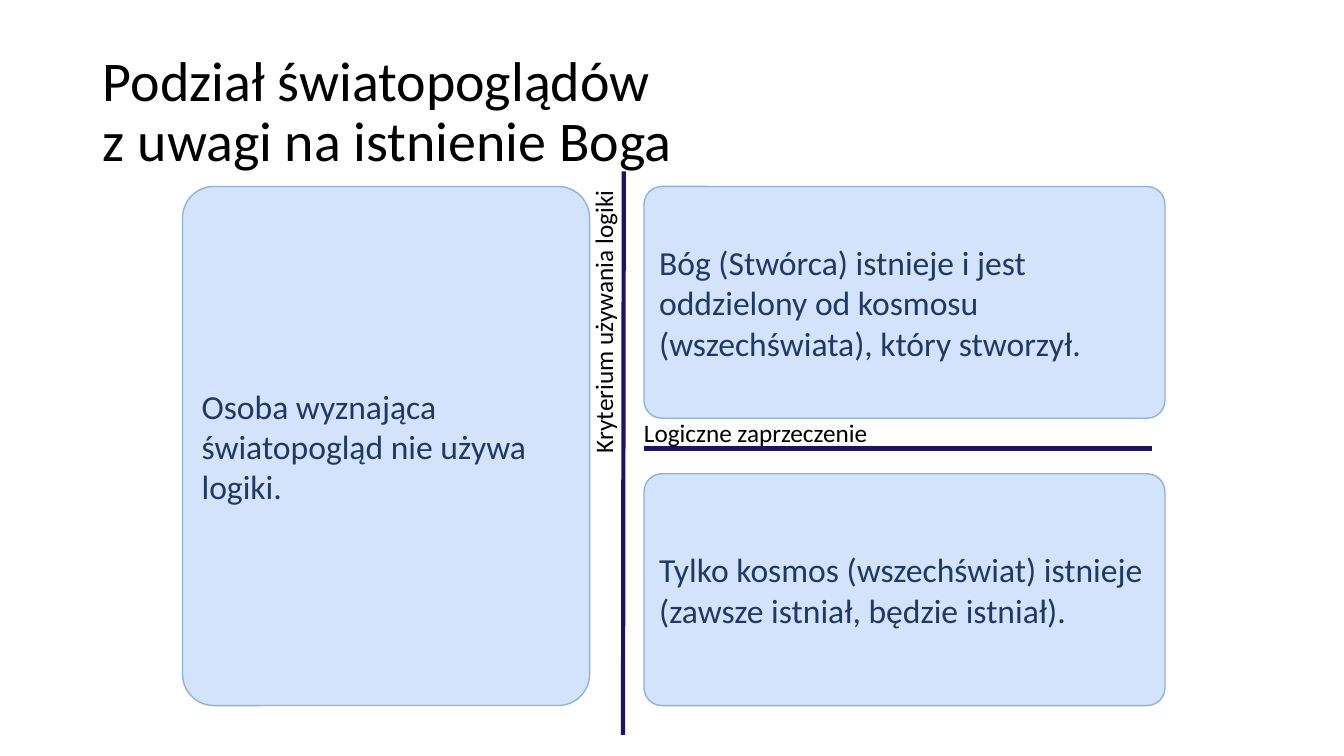
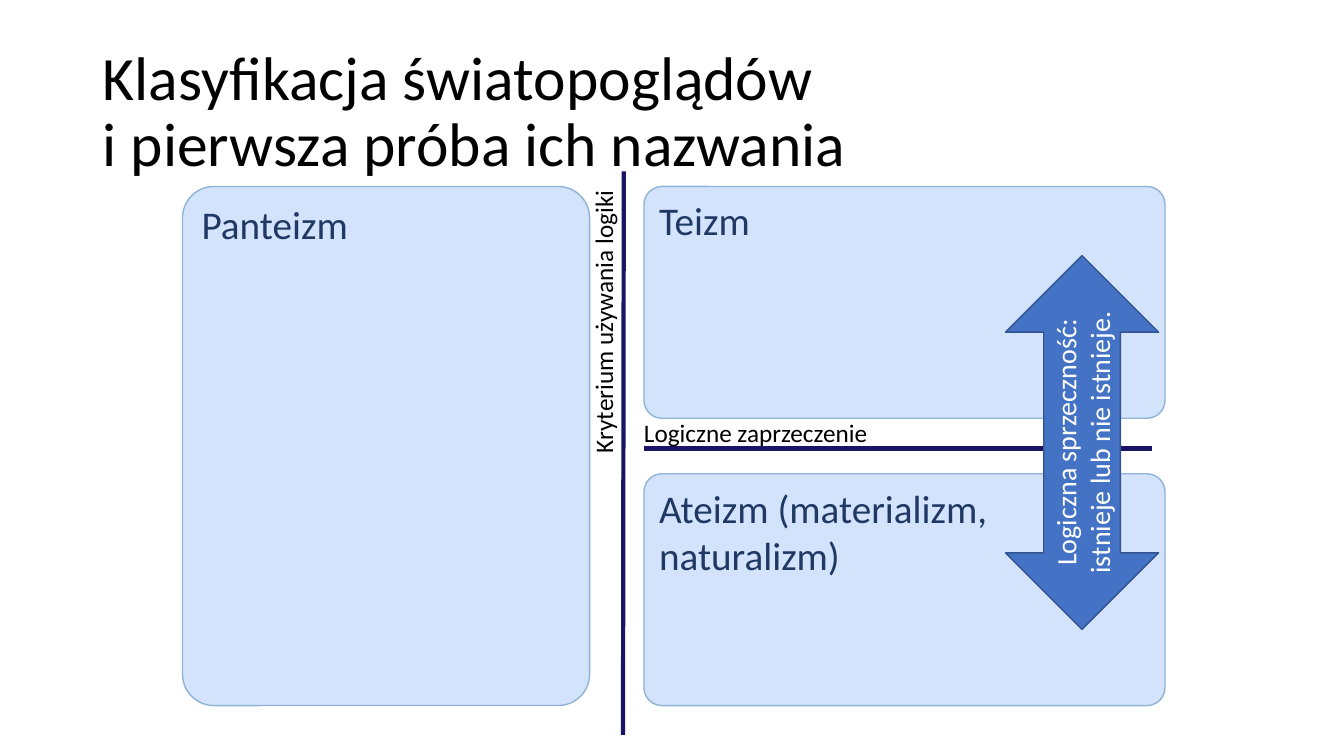
from pptx import Presentation
from pptx.dml.color import RGBColor
from pptx.enum.shapes import MSO_CONNECTOR, MSO_SHAPE
from pptx.enum.text import MSO_ANCHOR, MSO_AUTO_SIZE, PP_ALIGN
from pptx.oxml import parse_xml
from pptx.oxml.ns import nsdecls
from pptx.util import Cm, Pt

FONT = "Calibri"
COLORS = {
    "black": "000000", "white": "FFFFFF", "navy": "203864", "divider": "1B1464",
    "box": "D4E3FC", "box_line": "8EB3D7", "arrow": "4472C4", "arrow_line": "325491",
}
SLIDES = [
    {
        "title": "Podział światopoglądów\vz uwagi na istnienie Boga",
        "title_size": 40,
        "boxes": [
            "Osoba wyznająca światopogląd nie używa logiki.",
            "Bóg (Stwórca) istnieje i jest oddzielony od kosmosu (wszechświata), który stworzył.",
            "Tylko kosmos (wszechświat) istnieje (zawsze istniał, będzie istniał).",
        ],
        "box_size": 24,
        "anchor": MSO_ANCHOR.MIDDLE,
        "arrow": None,
    },
    {
        "title": "Klasyfikacja światopoglądów\vi pierwsza próba ich nazwania",
        "title_size": 44,
        "boxes": ["Panteizm", "Teizm", "Ateizm (materializm, naturalizm)"],
        "box_size": 28,
        "anchor": MSO_ANCHOR.TOP,
        "arrow": "Logiczna sprzeczność:\vistnieje lub nie istnieje.",
    },
]

TITLE_AREA = (2.34, 1.02, 29.21, 3.68)
LEFT, TOP, LEFT_WIDTH, HEIGHT = 4.6, 4.7, 10.26, 13.08
RIGHT, RIGHT_WIDTH, GAP = 16.23, 13.13, 1.4
HALF = (HEIGHT - GAP) / 2
BOX_AREAS = [
    (LEFT, TOP, LEFT_WIDTH, HEIGHT),
    (RIGHT, TOP, RIGHT_WIDTH, HALF),
    (RIGHT, TOP + HALF + GAP, RIGHT_WIDTH, HALF),
]
DIVIDERS = [(15.7, 18.52, 15.72, 4.32), (RIGHT, 11.3, 29.03, 11.3)]
LABELS = [
    ("Kryterium używania logiki", (11.53, 7.49, 7.34, 1.02), 270),
    ("Logiczne zaprzeczenie", (15.98, 10.39, 9.5, 1.02), 0),
]
ARROW_AREA = (22.56, 9.22, 9.42, 3.86)


def lengths(values):
    return [Cm(value) for value in values]


def rgb(name):
    return RGBColor.from_string(COLORS[name])


def write(shape, text, size, color="black", anchor=MSO_ANCHOR.TOP,
          align=PP_ALIGN.LEFT, spacing=1.0, auto_size=MSO_AUTO_SIZE.NONE):
    frame = shape.text_frame
    frame.word_wrap = True
    frame.auto_size = auto_size
    frame.vertical_anchor = anchor
    paragraph = frame.paragraphs[0]
    paragraph.text = text
    paragraph.alignment = align
    paragraph.line_spacing = spacing
    for run in paragraph.runs:
        run.font.name = FONT
        run.font.size = Pt(size)
        run.font.color.rgb = rgb(color)


def add_title(slide, text, size):
    title = slide.shapes.title
    title.left, title.top, title.width, title.height = lengths(TITLE_AREA)
    write(title, text, size, anchor=MSO_ANCHOR.MIDDLE, spacing=0.9)


def add_filled(slide, kind, area, fill, line):
    shape = slide.shapes.add_shape(kind, *lengths(area))
    shape.shadow.inherit = False
    shape.fill.solid()
    shape.fill.fore_color.rgb = rgb(fill)
    shape.line.color.rgb = rgb(line)
    shape.line.width = Pt(1)
    return shape


def add_divider(slide, ends):
    line = slide.shapes.add_connector(MSO_CONNECTOR.STRAIGHT, *lengths(ends))
    line.line.color.rgb = rgb("divider")
    line.line.width = Pt(3)
    line._element.spPr.append(parse_xml(f"<a:effectLst {nsdecls('a')}/>"))


def add_label(slide, text, area, rotation):
    label = slide.shapes.add_textbox(*lengths(area))
    label.rotation = rotation
    write(label, text, 18, auto_size=MSO_AUTO_SIZE.SHAPE_TO_FIT_TEXT)


def add_arrow(slide, text):
    arrow = add_filled(slide, MSO_SHAPE.LEFT_RIGHT_ARROW, ARROW_AREA, "arrow", "arrow_line")
    arrow.rotation = 270
    write(arrow, text, 20, color="white", anchor=MSO_ANCHOR.MIDDLE, align=PP_ALIGN.CENTER)


def build_slide(presentation, content):
    slide = presentation.slides.add_slide(presentation.slide_layouts[5])
    add_title(slide, content["title"], content["title_size"])
    for text, area in zip(content["boxes"], BOX_AREAS):
        box = add_filled(slide, MSO_SHAPE.ROUNDED_RECTANGLE, area, "box", "box_line")
        box.adjustments[0] = 0.077
        write(box, text, content["box_size"], color="navy", anchor=content["anchor"])
    for ends, label in zip(DIVIDERS, LABELS):
        add_divider(slide, ends)
        add_label(slide, *label)
    if content["arrow"]:
        add_arrow(slide, content["arrow"])


def main():
    presentation = Presentation()
    presentation.slide_width, presentation.slide_height = Cm(33.87), Cm(19.05)
    for content in SLIDES:
        build_slide(presentation, content)
    presentation.save("out.pptx")


if __name__ == "__main__":
    main()
